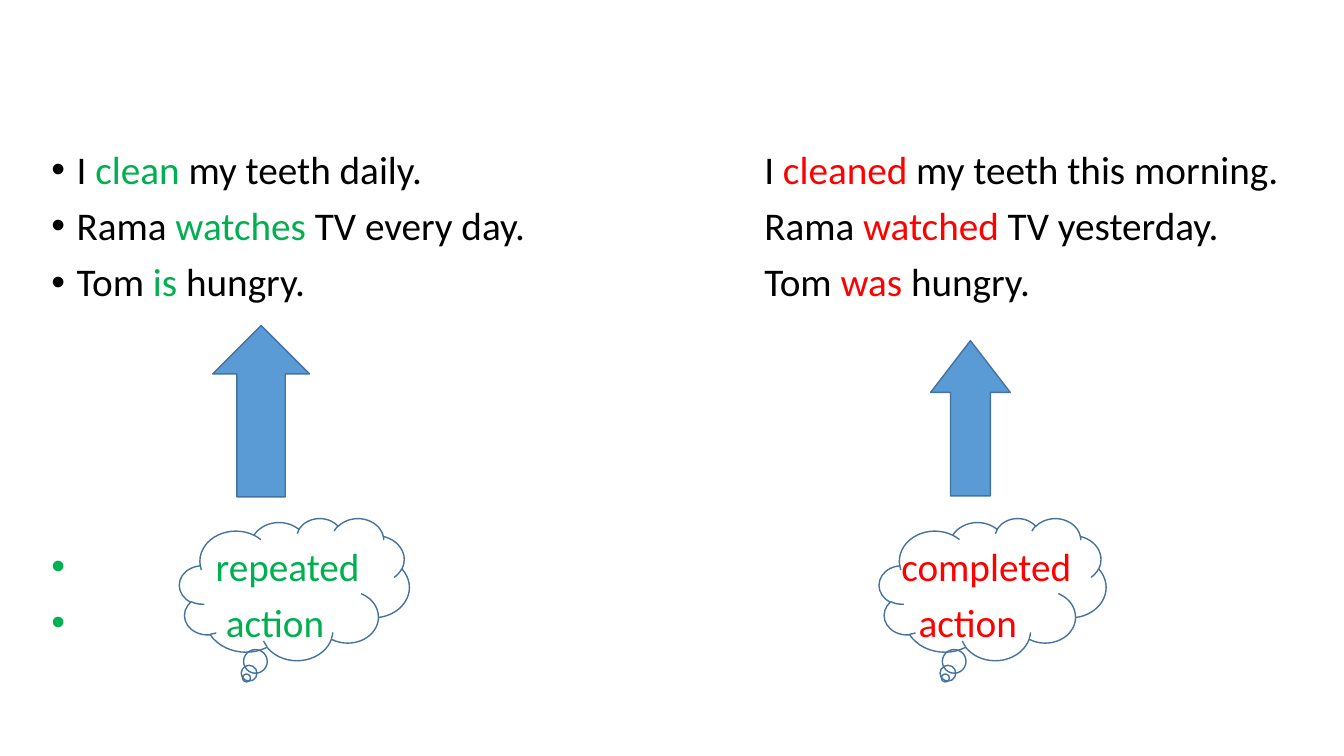
from dataclasses import dataclass

from lxml.etree import SubElement
from pptx import Presentation
from pptx.dml.color import RGBColor
from pptx.enum.shapes import MSO_SHAPE as Kind
from pptx.enum.text import MSO_ANCHOR as Anchor, MSO_AUTO_SIZE as Fit
from pptx.oxml.ns import qn
from pptx.util import Inches, Pt

BLACK, GREEN, RED = "000000", "00B050", "FF0000"
BLUE, EDGE = "5B9BD5", "43739E"
RIGHT = 7.07  # tab stop of the past-tense column


@dataclass
class Span:
    text: str
    color: str = BLACK


@dataclass
class Row:
    spans: list[Span]
    stops: list[float]
    before: float = 10


@dataclass
class Figure:
    kind: Kind
    box: tuple[float, float, float, float]
    fill: str | None = None
    head: float | None = None


def pair(start: str, now: str, rest: str, past: str, tail: str) -> Row:
    """Set a present-tense sentence beside its past-tense partner."""
    return Row([Span(start), Span(now, GREEN), Span(f"{rest}\t{start}"),
                Span(past, RED), Span(tail)], [RIGHT])


ROWS = [
    pair("I ", "clean", " my teeth daily.", "cleaned", " my teeth this morning."),
    pair("Rama ", "watches", " TV every day.", "watched", " TV yesterday."),
    pair("Tom ", "is", " hungry.", "was", " hungry."),
    Row([Span("\trepeated", GREEN), Span("\tcompleted", RED)], [1.63, 8.43], 172.8),
    Row([Span("\taction", GREEN), Span("\taction", RED)], [1.73, 8.6]),
]
FIGURES = [
    Figure(Kind.UP_ARROW, (2.11, 3.23, 0.96, 1.7), BLUE),
    Figure(Kind.UP_ARROW, (9.23, 3.38, 0.79, 1.54), BLUE, 0.65),
    Figure(Kind.CLOUD_CALLOUT, (1.78, 5.14, 2.28, 1.41)),
    Figure(Kind.CLOUD_CALLOUT, (8.72, 5.14, 2.25, 1.41)),
]


def rgb(code: str) -> RGBColor:
    return RGBColor.from_string(code)


def write(para, text: str, *, color: str = BLACK, size: float = 28,
          font: str = "Calibri") -> None:
    run = para.add_run()
    run.text = text
    run.font.name = font
    run.font.size = Pt(size)
    run.font.color.rgb = rgb(color)


def add_row(para, row: Row) -> None:
    para.line_spacing = 0.9
    para.space_before = Pt(row.before)
    para.space_after = Pt(0)
    props = para._p.get_or_add_pPr()
    props.set("marL", str(Inches(0.25)))
    props.set("indent", str(Inches(-0.25)))
    SubElement(props, qn("a:buFont"), typeface="Arial")
    SubElement(props, qn("a:buChar"), char="•")
    tabs = SubElement(props, qn("a:tabLst"))
    for stop in row.stops:
        SubElement(tabs, qn("a:tab"), pos=str(Inches(stop)), algn="l")
    for span in row.spans:
        write(para, span.text, color=span.color)


def add_body(slide) -> None:
    body = slide.placeholders[1]
    body.left, body.top = Inches(0.41), Inches(1.44)
    body.width, body.height = Inches(12.47), Inches(5.6)
    frame = body.text_frame
    frame.word_wrap = True
    frame.auto_size = Fit.NONE
    frame.vertical_anchor = Anchor.TOP
    for num, row in enumerate(ROWS):
        add_row(frame.add_paragraph() if num else frame.paragraphs[0], row)


def add_figure(slide, fig: Figure) -> None:
    shape = slide.shapes.add_shape(fig.kind, *map(Inches, fig.box))
    shape.shadow.inherit = False
    shape.line.color.rgb = rgb(EDGE)
    shape.line.width = Pt(1)
    if fig.fill:
        shape.fill.solid()
        shape.fill.fore_color.rgb = rgb(fig.fill)
    else:
        shape.fill.background()
    if fig.head is not None:
        shape.adjustments[1] = fig.head


def main() -> None:
    deck = Presentation()
    deck.slide_width, deck.slide_height = Inches(13.33), Inches(7.5)
    slide = deck.slides.add_slide(deck.slide_layouts[1])
    title = slide.shapes.title.element
    title.getparent().remove(title)
    add_body(slide)
    for fig in FIGURES:
        add_figure(slide, fig)
    deck.save("out.pptx")


if __name__ == "__main__":
    main()
